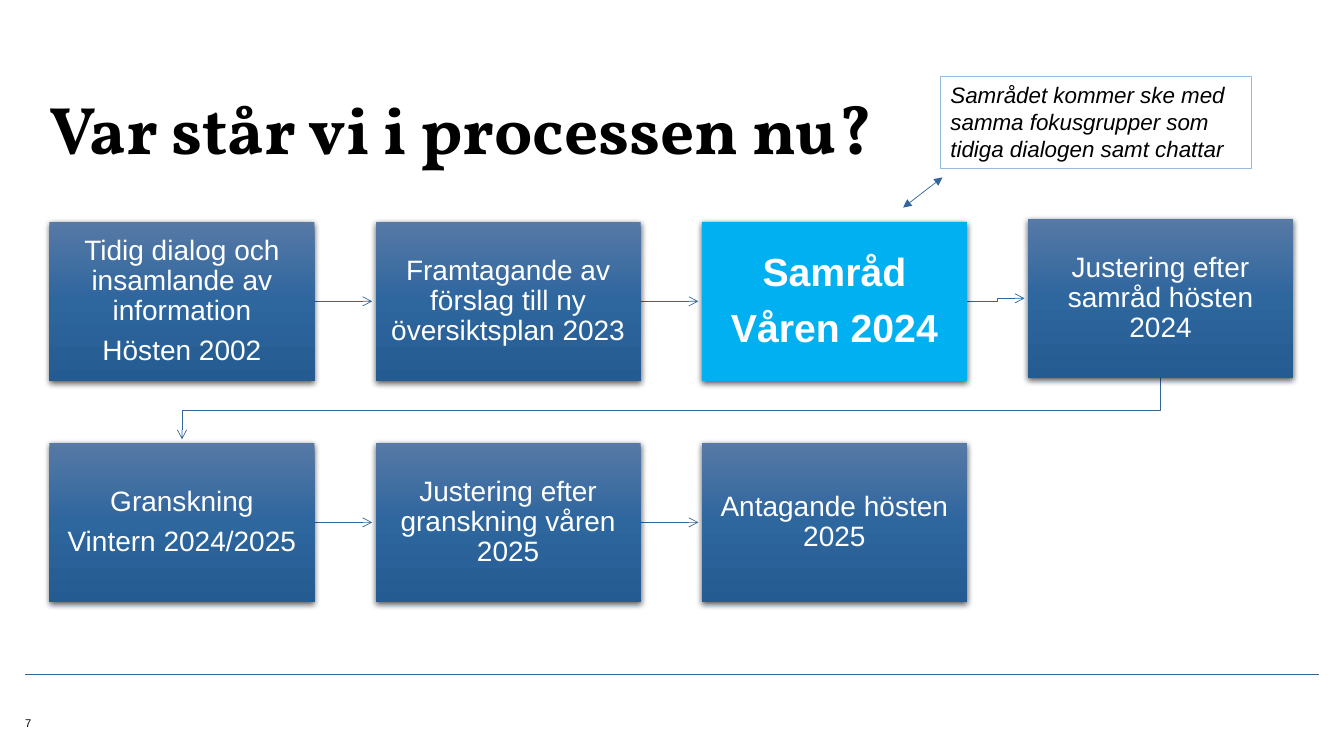
import copy
import itertools
from dataclasses import dataclass

import lxml.etree
import pptx
import pptx.dml.color
import pptx.enum.shapes
import pptx.enum.text
import pptx.oxml
import pptx.oxml.ns
import pptx.util

Pt = pptx.util.Pt
RGB = pptx.dml.color.RGBColor.from_string
qn = pptx.oxml.ns.qn
ALIGN = pptx.enum.text.PP_ALIGN
ANCHOR = pptx.enum.text.MSO_ANCHOR
SHAPE = pptx.enum.shapes.MSO_SHAPE
CONNECTOR = pptx.enum.shapes.MSO_CONNECTOR


@dataclass(frozen=True)
class Theme:
    body_font: str = "Arial"
    title_font: str = "Vollkorn"
    black: str = "000000"
    white: str = "FFFFFF"
    line: str = "336699"
    note_line: str = "98BADD"
    current: str = "00B0F0"
    gradient: tuple[str, ...] = ("5679A6", "2E669E", "245B91")
    title_size: float = 48
    current_size: float = 28
    step_size: float = 20
    note_size: float = 16
    number_size: float = 8


@dataclass(frozen=True)
class Step:
    lines: tuple[str, ...]
    col: int
    row: int
    lift: float = 0
    current: bool = False

    @property
    def left(self) -> float:
        return GRID_LEFT + self.col * COL_PITCH

    @property
    def top(self) -> float:
        return GRID_TOP + self.row * ROW_PITCH - self.lift


THEME = Theme()
GRID_LEFT, GRID_TOP = 35.3, 158.4
COL_PITCH, ROW_PITCH = 233, 157.9
STEP_W, STEP_H = 189.4, 113.7
ARROW_GAP = 2.5

STEPS = (
    Step(("Tidig dialog och insamlande av information", "Hösten 2002"), 0, 0),
    Step(("Framtagande av förslag till ny översiktsplan 2023",), 1, 0),
    Step(("Samråd", "Våren 2024"), 2, 0, current=True),
    Step(("Justering efter samråd hösten 2024",), 3, 0, lift=2.1),
    Step(("Granskning", "Vintern 2024/2025"), 0, 1),
    Step(("Justering efter granskning våren 2025",), 1, 1),
    Step(("Antagande hösten 2025",), 2, 1),
)


def write(sp, lines, *, size, font=THEME.body_font, color=THEME.black, bold=False,
          italic=False, align=ALIGN.LEFT, anchor=ANCHOR.MIDDLE, margins=(0, 0),
          spacing=1.0, after=0.0) -> None:
    """Fill a shape with paragraphs; margins are (horizontal, vertical)."""
    tf = sp.text_frame
    tf.word_wrap = True
    tf.vertical_anchor = anchor
    tf.margin_left = tf.margin_right = Pt(margins[0])
    tf.margin_top = tf.margin_bottom = Pt(margins[1])
    for i, text in enumerate(lines):
        p = tf.add_paragraph() if i else tf.paragraphs[0]
        p.alignment, p.line_spacing, p.space_after = align, spacing, Pt(after)
        r = p.add_run()
        r.text = text
        r.font.name, r.font.size = font, Pt(size)
        r.font.bold, r.font.italic = bold, italic
        r.font.color.rgb = RGB(color)


def add_box(s, left: float, top: float, width: float, height: float):
    sp = s.shapes.add_shape(SHAPE.RECTANGLE, Pt(left), Pt(top), Pt(width), Pt(height))
    sp.shadow.inherit = False
    sp.fill.background()
    sp.line.fill.background()
    return sp


def add_text(s, left: float, top: float, width: float, height: float, text: str, **fmt) -> None:
    write(s.shapes.add_textbox(Pt(left), Pt(top), Pt(width), Pt(height)), (text,), **fmt)


def fill_gradient(sp) -> None:
    sp.fill.gradient()
    sp.fill.gradient_angle = 270
    stop_list = sp._element.spPr.find(".//" + qn("a:gsLst"))
    stop_list.insert(1, copy.deepcopy(stop_list[0]))
    for i, (stop, color) in enumerate(zip(sp.fill.gradient_stops, THEME.gradient)):
        stop.position = i / 2
        stop.color.rgb = RGB(color)


def add_shadow(sp) -> None:
    effects = sp._element.spPr.find(qn("a:effectLst"))
    shadow = lxml.etree.SubElement(effects, qn("a:outerShdw"), blurRad=str(Pt(4.5)),
                                   dist=str(Pt(1.5)), dir="5400000", rotWithShape="0")
    color = lxml.etree.SubElement(shadow, qn("a:srgbClr"), val=THEME.black)
    lxml.etree.SubElement(color, qn("a:alpha"), val="63000")


def add_step(s, step: Step) -> None:
    sp = add_box(s, step.left, step.top, STEP_W, STEP_H)
    if step.current:
        sp.fill.solid()
        sp.fill.fore_color.rgb = RGB(THEME.current)
    else:
        fill_gradient(sp)
    add_shadow(sp)
    size = THEME.current_size if step.current else THEME.step_size
    write(sp, step.lines, size=size, color=THEME.white, bold=step.current,
          align=ALIGN.CENTER, margins=(9.4, 10), spacing=0.9, after=0.35 * size)


def add_line(s, *points: tuple[float, float], head: str = "none", tail: str = "none") -> None:
    """Draw a line through the points: a connector for two, an outline for more."""
    route = [(Pt(x), Pt(y)) for x, y in points]
    if len(route) == 2:
        sp = s.shapes.add_connector(CONNECTOR.STRAIGHT, *route[0], *route[1])
    else:
        builder = s.shapes.build_freeform(*route[0])
        builder.add_line_segments(route[1:], close=False)
        sp = builder.convert_to_shape()
        sp.fill.background()
    sp.line.color.rgb = RGB(THEME.line)
    sp.line.width = Pt(0.5)
    ln = sp._element.spPr.find(qn("a:ln"))
    lxml.etree.SubElement(ln, qn("a:headEnd"), type=head)
    lxml.etree.SubElement(ln, qn("a:tailEnd"), type=tail)
    lxml.etree.SubElement(sp._element.spPr, qn("a:effectLst"))


def link_steps(s, a: Step, b: Step) -> None:
    if a.row != b.row:
        x1, x2 = a.left + STEP_W / 2, b.left + STEP_W / 2
        y1, y2 = a.top + STEP_H, b.top
        mid = (y1 + y2) / 2
        points = [(x1, y1), (x1, mid), (x2, mid), (x2, y2 - ARROW_GAP)]
    else:
        x1, x2 = a.left + STEP_W, b.left
        y1, y2 = a.top + STEP_H / 2, b.top + STEP_H / 2
        mid = (x1 + x2) / 2
        bend = [(mid, y1), (mid, y2)] if y1 != y2 else []
        points = [(x1, y1), *bend, (x2 - ARROW_GAP, y2)]
    add_line(s, *points, tail="arrow")


def main() -> None:
    prs = pptx.Presentation()
    prs.slide_width, prs.slide_height = Pt(960), Pt(540)
    s = prs.slides.add_slide(prs.slide_layouts[6])

    add_line(s, (18, 481.7), (942.5, 481.7))
    add_text(s, 18, 510.5, 141.8, 11.5, "7", size=THEME.number_size)
    add_text(s, 35.3, 35.3, 889.2, 85.7, "Var står vi i processen nu?",
             size=THEME.title_size, font=THEME.title_font, bold=True,
             anchor=ANCHOR.BOTTOM, spacing=0.9)

    for a, b in itertools.pairwise(STEPS):
        link_steps(s, a, b)
    for step in STEPS:
        add_step(s, step)

    note = add_box(s, 671.8, 54.7, 222.5, 65.5)
    note.line.color.rgb = RGB(THEME.note_line)
    note.line.width = Pt(0.75)
    write(note, ("Samrådet kommer ske med samma fokusgrupper som tidiga dialogen samt chattar",),
          size=THEME.note_size, italic=True, anchor=ANCHOR.TOP, margins=(7.2, 3.6))
    add_line(s, (673.2, 126.7), (645.1, 148.3), head="triangle", tail="triangle")

    prs.save("out.pptx")


if __name__ == "__main__":
    main()
